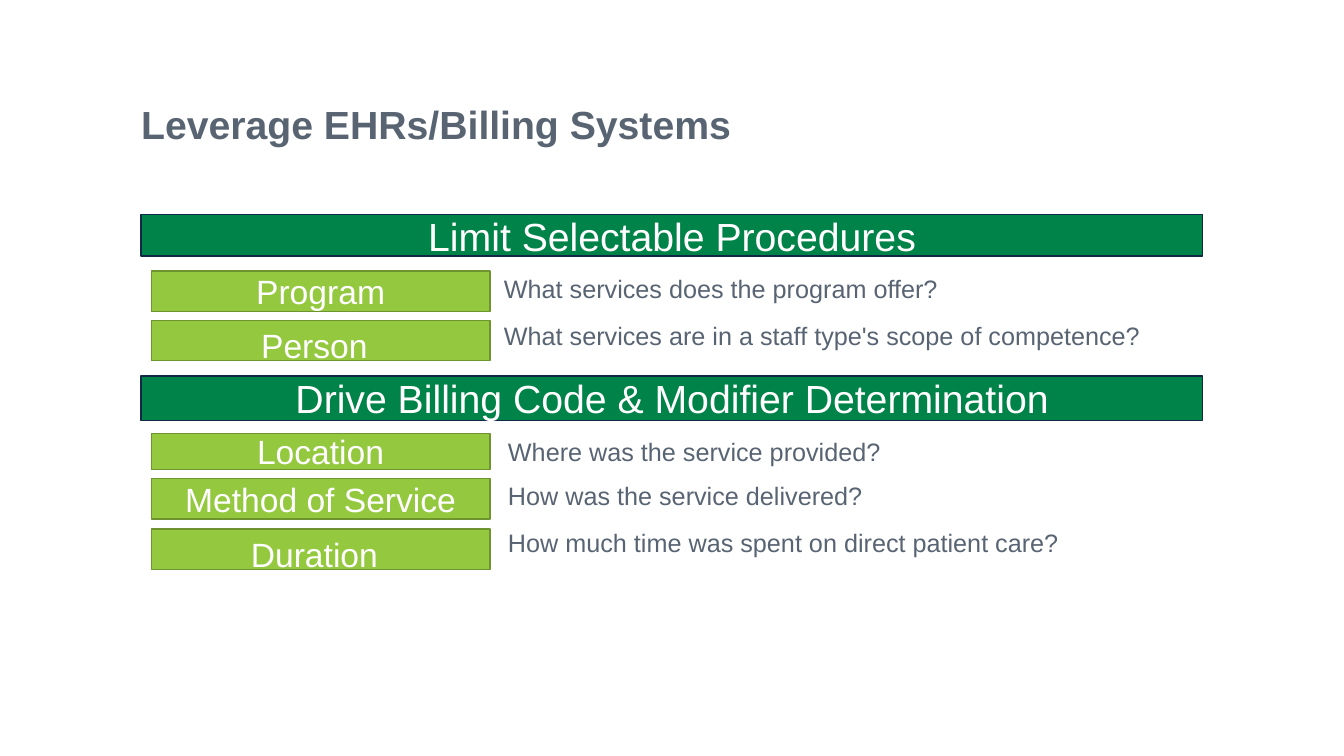
from dataclasses import dataclass

import pptx
import pptx.dml.color
import pptx.enum.shapes
import pptx.enum.text
import pptx.util

Inches = pptx.util.Inches
Align = pptx.enum.text.PP_ALIGN
Anchor = pptx.enum.text.MSO_ANCHOR


@dataclass(frozen=True)
class Theme:
    font: str = "Arial"
    slate: str = "596473"
    white: str = "FFFFFF"
    green: str = "008348"
    navy: str = "122946"
    lime: str = "93C83F"
    olive: str = "6D942F"
    heading: int = 28
    label: int = 24
    question: int = 18
    spacer: int = 32
    outline: int = 1


THEME = Theme()
LABEL_LEFT, LABEL_WIDTH = 1.5, 3.36
BANNER_LEFT, BANNER_WIDTH = 1.4, 10.53

BANNERS = [
    ("Limit Selectable Procedures", 2.13, 0.41),
    ("Drive Billing Code & Modifier Determination", 3.73, 0.44),
]
TOPICS = [
    ("Program", 2.69, 0.4, "", "What services does the program offer?", 4.9, 2.66),
    ("Person", 3.18, 0.4, " ", "What services are in a staff type's scope of competence?", 4.9, 3.13),
    ("Location", 4.3, 0.36, "", "Where was the service provided?", 4.94, 4.28),
    ("Method of Service", 4.75, 0.4, "", "How was the service delivered?", 4.94, 4.72),
    ("Duration", 5.25, 0.4, " ", "How much time was spent on direct patient care?", 4.94, 5.18),
]


def rgb(code):
    return pptx.dml.color.RGBColor.from_string(code)


def add_run(paragraph, words, size, color, bold=False):
    run = paragraph.add_run()
    run.text = words
    run.font.name = THEME.font
    run.font.size = pptx.util.Pt(size)
    run.font.bold = bold
    run.font.color.rgb = rgb(color)


def add_bar(slide, words, left, top, width, height, fill, line, size):
    bar = slide.shapes.add_shape(
        pptx.enum.shapes.MSO_SHAPE.RECTANGLE,
        Inches(left), Inches(top), Inches(width), Inches(height))
    bar.shadow.inherit = False
    bar.fill.solid()
    bar.fill.fore_color.rgb = rgb(fill)
    bar.line.color.rgb = rgb(line)
    bar.line.width = pptx.util.Pt(THEME.outline)
    frame = bar.text_frame
    frame.word_wrap = True
    frame.vertical_anchor = Anchor.MIDDLE
    paragraph = frame.paragraphs[0]
    paragraph.alignment = Align.CENTER
    add_run(paragraph, words, size, THEME.white)
    return paragraph


def add_text(slide, words, left, top, width, height, size, bold=False):
    box = slide.shapes.add_textbox(
        Inches(left), Inches(top), Inches(width), Inches(height))
    frame = box.text_frame
    frame.word_wrap = True
    add_run(frame.paragraphs[0], words, size, THEME.slate, bold)
    return frame


def add_title(slide, words):
    frame = add_text(slide, words, 1.4, 0.9, 10.42, 1.14, THEME.heading, True)
    frame.margin_left = frame.margin_right = frame.margin_bottom = 0
    frame.margin_top = Inches(0.15)
    frame.paragraphs[0].line_spacing = 0.9


def add_topic(slide, label, top, height, spacer, question, question_left, question_top):
    paragraph = add_bar(slide, label, LABEL_LEFT, top, LABEL_WIDTH, height,
                        THEME.lime, THEME.olive, THEME.label)
    if spacer:
        add_run(paragraph, spacer, THEME.spacer, THEME.white)
    add_text(slide, question, question_left, question_top, 6.96, 0.4, THEME.question)


def main():
    deck = pptx.Presentation()
    deck.slide_width, deck.slide_height = Inches(13.33), Inches(7.5)
    slide = deck.slides.add_slide(deck.slide_layouts[6])
    add_title(slide, "Leverage EHRs/Billing Systems")
    for topic in TOPICS:
        add_topic(slide, *topic)
    for words, top, height in BANNERS:
        add_bar(slide, words, BANNER_LEFT, top, BANNER_WIDTH, height,
                THEME.green, THEME.navy, THEME.heading)
    deck.save("out.pptx")


if __name__ == "__main__":
    main()
